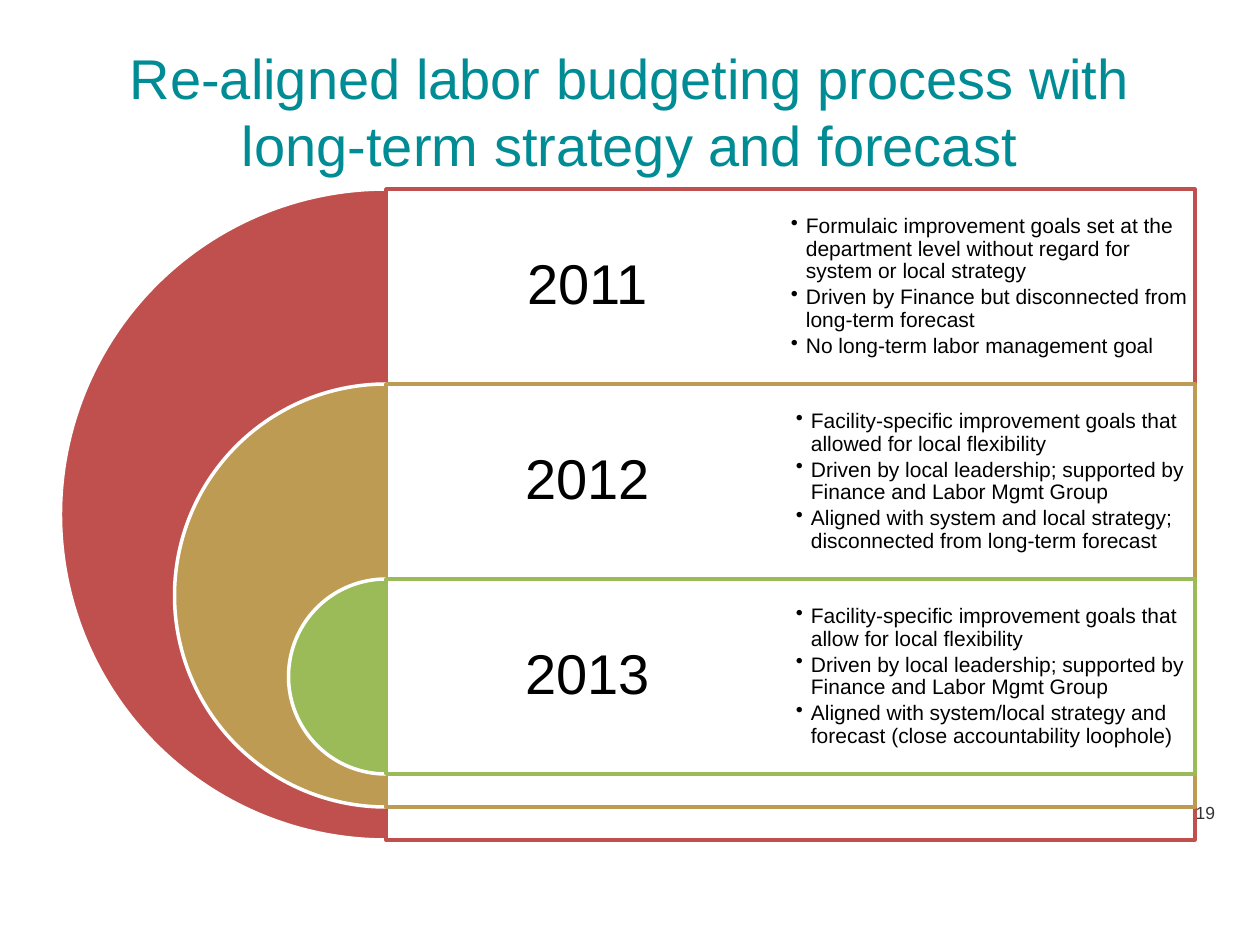
from lxml.etree import SubElement
from pptx import Presentation
from pptx.dml.color import RGBColor
from pptx.enum.shapes import MSO_SHAPE
from pptx.enum.text import MSO_ANCHOR, PP_ALIGN
from pptx.oxml.ns import qn
from pptx.util import Pt

PX = 914400 // 126
FONT = "Arial"
TEAL = RGBColor(0x00, 0x8C, 0x95)
GRAY = RGBColor(0x33, 0x33, 0x33)
BLACK = RGBColor(0x00, 0x00, 0x00)
WHITE = RGBColor(0xFF, 0xFF, 0xFF)
RED = RGBColor(0xC0, 0x50, 0x4D)
GOLD = RGBColor(0xBD, 0x9B, 0x53)
GREEN = RGBColor(0x9B, 0xBB, 0x59)

TITLE = "Re-aligned labor budgeting process with long-term strategy and forecast"
PAGE_NUMBER = "19"
YEARS = [
    ("2011", RED, (785, 415), [
        "Formulaic improvement goals set at the department level without regard for system or local strategy",
        "Driven by Finance but disconnected from long-term forecast",
        "No long-term labor management goal",
    ]),
    ("2012", GOLD, (790, 404), [
        "Facility-specific improvement goals that allowed for local flexibility",
        "Driven by local leadership; supported by Finance and Labor Mgmt Group",
        "Aligned with system and local strategy; disconnected from long-term forecast",
    ]),
    ("2013", GREEN, (790, 404), [
        "Facility-specific improvement goals that allow for local flexibility",
        "Driven by local leadership; supported by Finance and Labor Mgmt Group",
        "Aligned with system/local strategy and forecast (close accountability loophole)",
    ]),
]

TOP, ROW = 189, 195
AXIS, PANEL_WIDTH, YEAR_WIDTH = 386, 809, 404
DIAMETER_STEP = 228
INDENT = 15


def emu(*lengths):
    return [length * PX for length in lengths]


def add_bullet(paragraph):
    properties = paragraph._p.get_or_add_pPr()
    properties.set("marL", str(INDENT * PX))
    properties.set("indent", str(-INDENT * PX))
    SubElement(properties, qn("a:buChar")).set("char", "•")


def add_text(page, area, paragraphs, size, color=BLACK, align=PP_ALIGN.LEFT,
             anchor=MSO_ANCHOR.MIDDLE, insets=(13, 6), spacing=None,
             after=0, bullets=False):
    frame = page.shapes.add_textbox(*emu(*area)).text_frame
    frame.word_wrap = True
    frame.vertical_anchor = anchor
    frame.margin_left = frame.margin_right = insets[0] * PX
    frame.margin_top = frame.margin_bottom = insets[1] * PX
    for index, text in enumerate(paragraphs):
        paragraph = frame.paragraphs[0] if index == 0 else frame.add_paragraph()
        paragraph.alignment = align
        if spacing:
            paragraph.line_spacing = spacing
        paragraph.space_after = Pt(after)
        if bullets:
            add_bullet(paragraph)
        span = paragraph.add_run()
        span.text = text
        span.font.name = FONT
        span.font.size = Pt(size)
        span.font.color.rgb = color


def add_outlined(page, preset, area, fill, line):
    shape = page.shapes.add_shape(preset, *emu(*area))
    shape.shadow.inherit = False
    shape.fill.solid()
    shape.fill.fore_color.rgb = fill
    shape.line.color.rgb = line
    shape.line.width = Pt(2)
    return shape


def set_opacity(shape, percent):
    color = shape._element.spPr.find(qn("a:solidFill"))[0]
    SubElement(color, qn("a:alpha")).set("val", str(percent * 1000))


def add_year(page, index, year, color, bullet_span, points):
    top = TOP + index * ROW
    diameter = ROW + (len(YEARS) - 1 - index) * DIAMETER_STEP
    half_disc = add_outlined(page, MSO_SHAPE.PIE,
                             (AXIS - diameter / 2, top, diameter, diameter), color, WHITE)
    # Angles of 90 and 270 degrees, in the units of adjustments
    half_disc.adjustments[0] = 54
    half_disc.adjustments[1] = 162
    panel = add_outlined(page, MSO_SHAPE.RECTANGLE,
                         (AXIS, top, PANEL_WIDTH, diameter), WHITE, color)
    set_opacity(panel, 90)
    add_text(page, (AXIS, top, YEAR_WIDTH, ROW), [year], 32,
             align=PP_ALIGN.CENTER, insets=(16, 16), spacing=0.9)
    left, width = bullet_span
    add_text(page, (left, top, width, ROW), points, 12, insets=(6, 6),
             spacing=0.9, after=1.8, bullets=True)


def main():
    deck = Presentation()
    deck.slide_width, deck.slide_height = emu(1260, 945)
    page = deck.slides.add_slide(deck.slide_layouts[6])
    add_text(page, (1081, 796, 147, 29), [PAGE_NUMBER], 10, GRAY,
             align=PP_ALIGN.RIGHT, anchor=MSO_ANCHOR.TOP)
    add_text(page, (63, 32, 1134, 157), [TITLE], 32, TEAL, align=PP_ALIGN.CENTER)
    for index, entry in enumerate(YEARS):
        add_year(page, index, *entry)
    deck.save("out.pptx")


if __name__ == "__main__":
    main()
